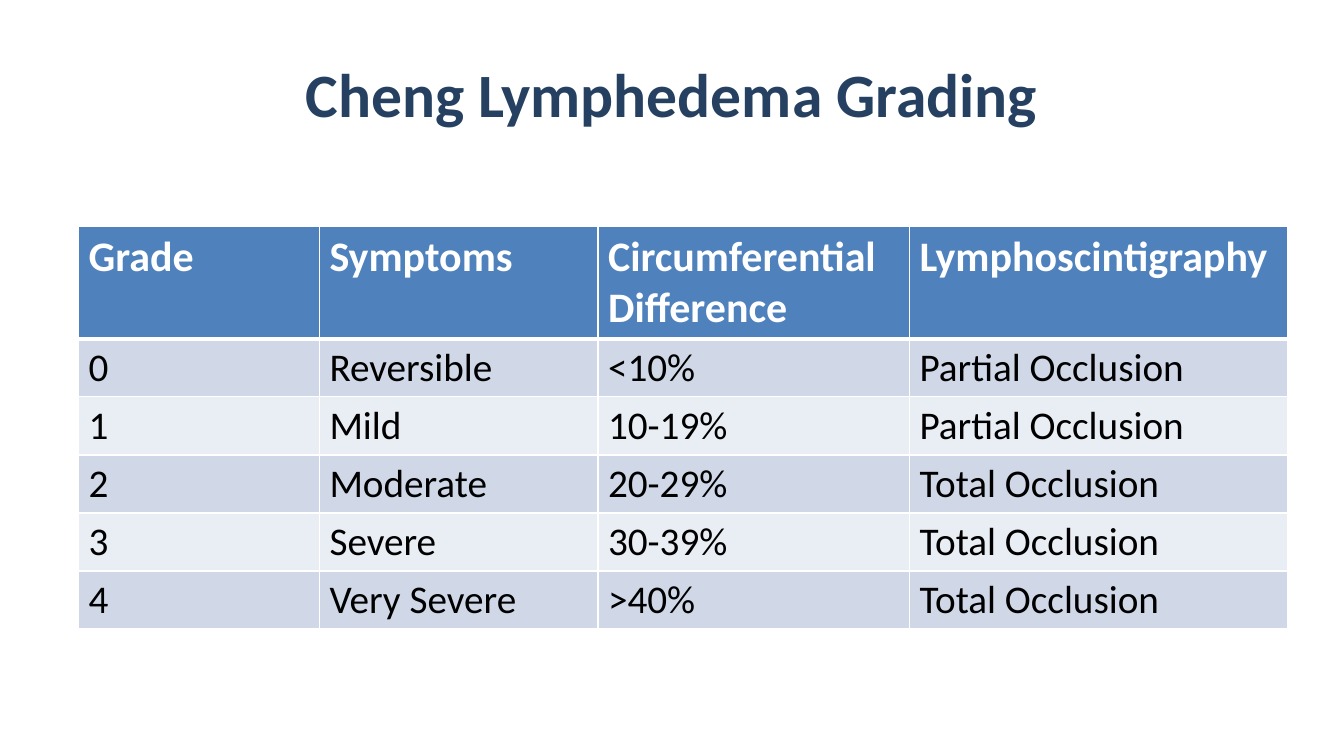
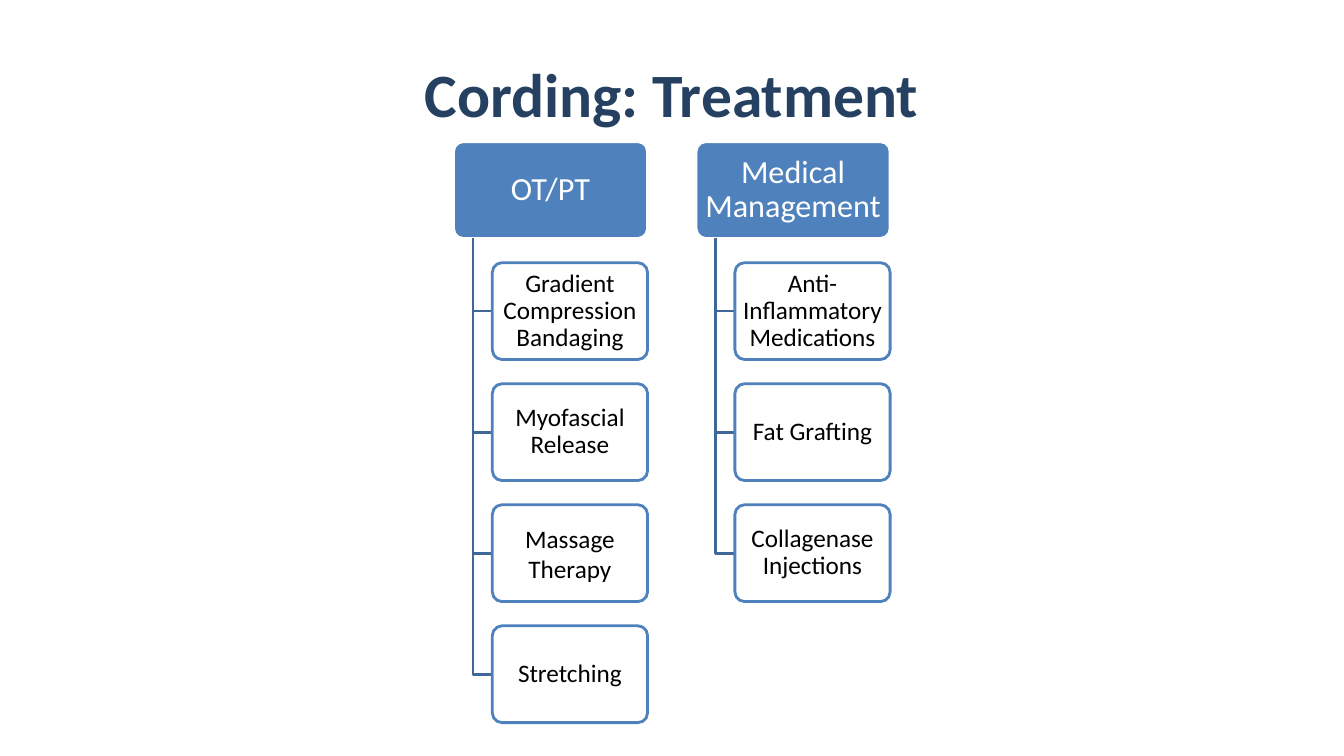
from lxml.etree import SubElement
from pptx import Presentation
from pptx.dml.color import RGBColor
from pptx.enum.shapes import MSO_SHAPE
from pptx.enum.text import MSO_ANCHOR, PP_ALIGN
from pptx.oxml.ns import qn
from pptx.util import Cm, Pt

# Content
GRADES = [
    ("Grade", "Symptoms", "Circumferential Difference", "Lymphoscintigraphy"),
    ("0", "Reversible", "<10%", "Partial Occlusion"),
    ("1", "Mild", "10-19%", "Partial Occlusion"),
    ("2", "Moderate", "20-29%", "Total Occlusion"),
    ("3", "Severe", "30-39%", "Total Occlusion"),
    ("4", "Very Severe", ">40%", "Total Occlusion"),
]
CARE = {
    "OT/PT": ["Gradient Compression Bandaging", "Myofascial Release",
              "Massage Therapy", "Stretching"],
    "Medical Management": ["Anti-Inflammatory Medications", "Fat Grafting",
                           "Collagenase Injections"],
}
LOOSE = {"Massage Therapy"}  # set at full line spacing

# Shared look
NAVY = RGBColor(0x25, 0x40, 0x61)
BLUE = RGBColor(0x4F, 0x81, 0xBD)
STEEL = RGBColor(0x3F, 0x67, 0x97)
BANDS = [RGBColor(0xE9, 0xED, 0xF4), RGBColor(0xD0, 0xD8, 0xE8)]
WHITE = RGBColor(0xFF, 0xFF, 0xFF)
BLACK = RGBColor(0, 0, 0)
FONT = "Calibri"
TITLE = {"size": Pt(44), "bold": True}
HEAD = {"size": Pt(30), "bold": True}
BODY = {"size": Pt(28), "bold": False}
GROUP = {"size": Pt(23), "bold": False}
ITEM = {"size": Pt(18), "bold": False}

# Table measures in cm
WIDTHS = [6.07, 7.02, 7.85, 9.54]
HEIGHTS = [2.79] + [1.46] * 5

# Tree measures in cm
LEFT, TOP = 11.43, 3.57
WIDE, HIGH = 4.89, 2.44
PITCH, STEP = 1.25 * WIDE, 1.25 * HIGH


def style(para, look, color):
    for key, value in {"name": FONT, **look}.items():
        setattr(para.font, key, value)
    para.font.color.rgb = color


def new_slide(deck, text):
    slide = deck.slides.add_slide(deck.slide_layouts[5])
    title = slide.shapes.title
    place = {"left": 1.69, "top": 0.76, "width": 30.48, "height": 3.18}
    for key, value in place.items():
        setattr(title, key, Cm(value))
    title.text_frame.text = text
    title.text_frame.vertical_anchor = MSO_ANCHOR.MIDDLE
    para = title.text_frame.paragraphs[0]
    para.alignment = PP_ALIGN.CENTER
    style(para, TITLE, NAVY)
    return slide


def edge(cell, side, points):
    line = SubElement(cell._tc.get_or_add_tcPr(), qn("a:ln" + side),
                      w=str(Pt(points)))
    fill = SubElement(line, qn("a:solidFill"))
    SubElement(fill, qn("a:srgbClr"), val=str(WHITE))


def add_grid(slide):
    grid = slide.shapes.add_table(
        len(GRADES), len(WIDTHS), Cm(1.98), Cm(5.7),
        Cm(sum(WIDTHS)), Cm(sum(HEIGHTS))).table
    for col, width in zip(grid.columns, WIDTHS):
        col.width = Cm(width)
    for row, height in zip(grid.rows, HEIGHTS):
        row.height = Cm(height)
    for r, words in enumerate(GRADES):
        for c, text in enumerate(words):
            cell = grid.cell(r, c)
            cell.text = text
            # Heavier rule between the head and the body
            sides = {"L": 1, "R": 1, "T": 3 if r == 1 else 1,
                     "B": 3 if r == 0 else 1}
            for side, points in sides.items():
                edge(cell, side, points)
            cell.fill.solid()
            cell.fill.fore_color.rgb = BANDS[r % 2] if r else BLUE
            style(cell.text_frame.paragraphs[0],
                  BODY if r else HEAD, BLACK if r else WHITE)


def add_box(slide, text, x, y, width, look, ink, fill, rim):
    box = slide.shapes.add_shape(MSO_SHAPE.ROUNDED_RECTANGLE,
                                 Cm(x), Cm(y), Cm(width), Cm(HIGH))
    box.adjustments[0] = 0.1
    box.shadow.inherit = False
    box.fill.solid()
    box.fill.fore_color.rgb = fill
    box.line.color.rgb = rim
    box.line.width = Pt(2)
    frame = box.text_frame
    form = {"word_wrap": True, "vertical_anchor": MSO_ANCHOR.MIDDLE,
            "margin_left": Cm(0.1), "margin_right": Cm(0.1),
            "margin_top": Cm(0.08), "margin_bottom": Cm(0.08), "text": text}
    for key, value in form.items():
        setattr(frame, key, value)
    para = frame.paragraphs[0]
    para.alignment = PP_ALIGN.CENTER
    para.line_spacing = 1.0 if text in LOOSE else 0.9
    style(para, look, ink)


def add_elbow(slide, x1, y1, x2, y2):
    pen = slide.shapes.build_freeform(Cm(x1), Cm(y1))
    pen.add_line_segments([(Cm(x1), Cm(y2)), (Cm(x2), Cm(y2))], close=False)
    elbow = pen.convert_to_shape()
    elbow.shadow.inherit = False
    elbow.fill.background()
    elbow.line.color.rgb = STEEL
    elbow.line.width = Pt(2)


def add_tree(slide):
    for n, (group, items) in enumerate(CARE.items()):
        x = LEFT + n * PITCH
        trunk, inset = x + 0.1 * WIDE, x + 0.2 * WIDE
        add_box(slide, group, x, TOP, WIDE, GROUP, WHITE, BLUE, WHITE)
        for i, item in enumerate(items, 1):
            y = TOP + i * STEP
            add_elbow(slide, trunk, TOP + HIGH, inset, y + HIGH / 2)
            add_box(slide, item, inset, y, 0.8 * WIDE,
                    ITEM, BLACK, WHITE, BLUE)


def main():
    deck = Presentation()
    deck.slide_width, deck.slide_height = Cm(33.87), Cm(19.05)
    add_grid(new_slide(deck, "Cheng Lymphedema Grading"))
    add_tree(new_slide(deck, "Cording: Treatment"))
    deck.save("out.pptx")


if __name__ == "__main__":
    main()
